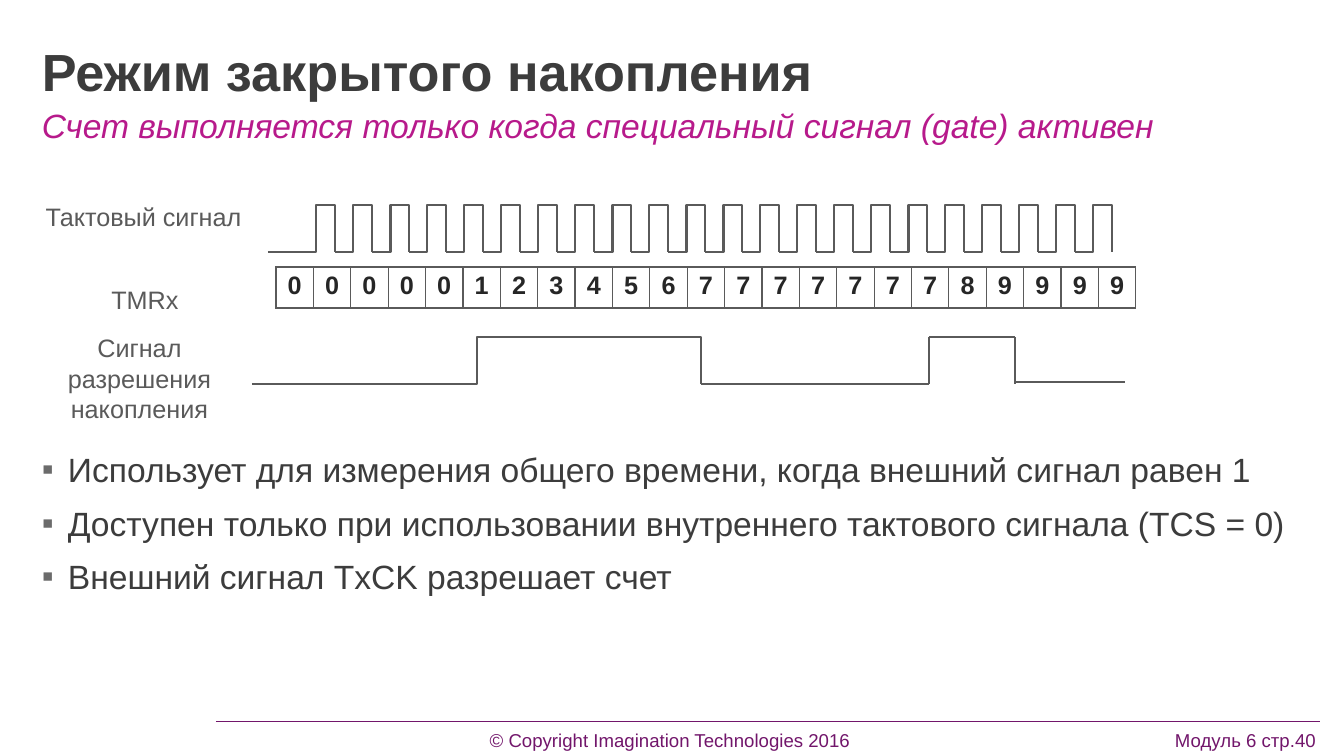
from lxml import etree
from pptx import Presentation
from pptx.dml.color import RGBColor
from pptx.enum.shapes import MSO_CONNECTOR, MSO_SHAPE
from pptx.enum.text import MSO_ANCHOR, PP_ALIGN
from pptx.oxml.ns import qn
from pptx.util import Emu, Pt

CENTER = PP_ALIGN.CENTER
LEFT = PP_ALIGN.LEFT
MIDDLE = MSO_ANCHOR.MIDDLE
RECTANGLE = MSO_SHAPE.RECTANGLE
STRAIGHT = MSO_CONNECTOR.STRAIGHT

FONT = "Arial"
WHITE = RGBColor(0xFF, 0xFF, 0xFF)
DARK = RGBColor(0x3C, 0x3C, 0x3C)
DIGIT = RGBColor(0x26, 0x26, 0x26)
GRAY = RGBColor(0x5A, 0x5A, 0x5A)
MAGENTA = RGBColor(0xB7, 0x1A, 0x8B)
PURPLE = RGBColor(0x72, 0x16, 0x6B)
BULLET_COLOR = "6B6B6B"

# Content; all lengths are in px
TITLE = "Режим закрытого накопления"
SUBTITLE = "Счет выполняется только когда специальный сигнал (gate) активен"
POINTS = [
    "Использует для измерения общего времени, когда внешний сигнал равен 1",
    "Доступен только при использовании внутреннего тактового сигнала (TCS = 0)",
    "Внешний сигнал TxCK разрешает счет",
]
FOOTER = "\t© Copyright Imagination Technologies 2016\tМодуль 6 стр.40"
FOOTER_TABS = [(646, "ctr"), (1292, "r")]
COUNTS = "00000123456777777789999"
SIGNAL_LABELS = [
    ("Тактовый сигнал", (35, 197, 217, 39)),
    ("TMRx", (95, 280, 100, 39)),
    ("Сигнал разрешения накопления", (35, 328, 209, 100)),
]
PULSES, PULSE_START, PULSE_PITCH = 22, 298, 37
CLOCK_HIGH, CLOCK_LOW = 205, 252
GATE_HIGH, GATE_LOW = 337, 384
FIRST_GATE = [(252, GATE_LOW), (477, GATE_LOW), (477, GATE_HIGH),
              (701, GATE_HIGH), (701, GATE_LOW)]
SIGNAL_LINES = [
    (268, CLOCK_LOW, PULSE_START, CLOCK_LOW),
    (701, GATE_LOW, 929, GATE_LOW),
    (929, GATE_LOW, 929, GATE_HIGH),
    (929, GATE_HIGH, 1015, GATE_HIGH),
    (1015, GATE_LOW, 1015, GATE_HIGH),
    (1015, 382, 1125, 382),
]


def px(length):
    return Emu(round(length * 914400 / 100.8))


prs = Presentation()
prs.slide_width, prs.slide_height = px(1344), px(756)
slide = prs.slides.add_slide(prs.slide_layouts[6])
shapes = slide.shapes


def style(paragraph, size, color, bold=False, italic=False, align=LEFT):
    paragraph.alignment = align
    for run in paragraph.runs:
        font = run.font
        font.name, font.size = FONT, Pt(size)
        font.bold, font.italic = bold, italic
        font.color.rgb = color


def add_text(box, text, size, color, spacing, **look):
    frame = shapes.add_textbox(*map(px, box)).text_frame
    frame.word_wrap = True
    frame.margin_left = frame.margin_right = 0
    frame.margin_top = frame.margin_bottom = 0
    frame.text = text
    for paragraph in frame.paragraphs:
        style(paragraph, size, color, **look)
        paragraph.line_spacing = spacing
    return frame


def add_line(x1, y1, x2, y2, color, width):
    line = shapes.add_connector(STRAIGHT, *map(px, (x1, y1, x2, y2)))
    line.line.color.rgb = color
    line.line.width = Pt(width)
    etree.SubElement(line._element.spPr, qn("a:effectLst"))


def add_wave(points):
    corners = [(px(x), px(y)) for x, y in points]
    builder = shapes.build_freeform(*corners[0])
    builder.add_line_segments(corners[1:], close=False)
    wave = builder.convert_to_shape()
    wave.shadow.inherit = False
    wave.fill.background()
    wave.line.color.rgb = GRAY
    wave.line.width = Pt(1.5)


def add_borders(cell):
    props = cell._tc.get_or_add_tcPr()
    for place, side in enumerate(("a:lnL", "a:lnR", "a:lnT", "a:lnB")):
        border = etree.Element(qn(side), w=str(Pt(1)))
        fill = etree.SubElement(border, qn("a:solidFill"))
        etree.SubElement(fill, qn("a:srgbClr"), val=str(GRAY))
        props.insert(place, border)


# Footer
footer = add_text((24, 731, 1296, 20), FOOTER, 13.3, PURPLE, 0.9)
tab_list = etree.SubElement(footer.paragraphs[0]._p.get_or_add_pPr(), qn("a:tabLst"))
for position, alignment in FOOTER_TABS:
    etree.SubElement(tab_list, qn("a:tab"), pos=str(px(position)), algn=alignment)
add_line(216, 721, 1320, 721, PURPLE, 0.5)

# Headings
add_text((42, 49, 1278, 47), TITLE, 37.3, DARK, 0.85, bold=True)
add_text((42, 103, 1278, 31), SUBTITLE, 24, MAGENTA, 1.05, italic=True)

# Bullet points
points = add_text((42, 447, 1270, 273), "\n".join(POINTS), 24, DARK, 1.05)
for point in points.paragraphs:
    point.space_after = Pt(8)
    props = point._p.get_or_add_pPr()
    props.set("marL", str(px(26)))
    props.set("indent", str(px(-26)))
    bullet_color = etree.SubElement(props, qn("a:buClr"))
    etree.SubElement(bullet_color, qn("a:srgbClr"), val=BULLET_COLOR)
    etree.SubElement(props, qn("a:buFont"), typeface=FONT)
    etree.SubElement(props, qn("a:buChar"), char="▪")

# Counter values
counter = shapes.add_table(1, len(COUNTS), px(276), px(267), px(860), px(41)).table
counter.first_row = counter.horz_banding = False
for column, count in enumerate(COUNTS):
    cell = counter.cell(0, column)
    cell.text = count
    cell.fill.background()
    style(cell.text_frame.paragraphs[0], 18, DIGIT, bold=True, align=CENTER)
    add_borders(cell)

# Signal names
for name, box in SIGNAL_LABELS:
    label = shapes.add_shape(RECTANGLE, *map(px, box))
    label.shadow.inherit = False
    label.fill.solid()
    label.fill.fore_color.rgb = WHITE
    label.line.fill.background()
    frame = label.text_frame
    frame.word_wrap = True
    frame.vertical_anchor = MIDDLE
    frame.margin_top = frame.margin_bottom = px(4)
    frame.text = name
    style(frame.paragraphs[0], 18, GRAY, align=CENTER)

# Clock pulses
for pulse in range(PULSES):
    start = PULSE_START + pulse * PULSE_PITCH
    rise, end = start + PULSE_PITCH / 2, start + PULSE_PITCH
    add_wave([(start, CLOCK_LOW), (rise, CLOCK_LOW), (rise, CLOCK_HIGH),
              (end, CLOCK_HIGH), (end, CLOCK_LOW)])

# Gate signal
add_wave(FIRST_GATE)
for ends in SIGNAL_LINES:
    add_line(*ends, GRAY, 1.5)

prs.save("out.pptx")
